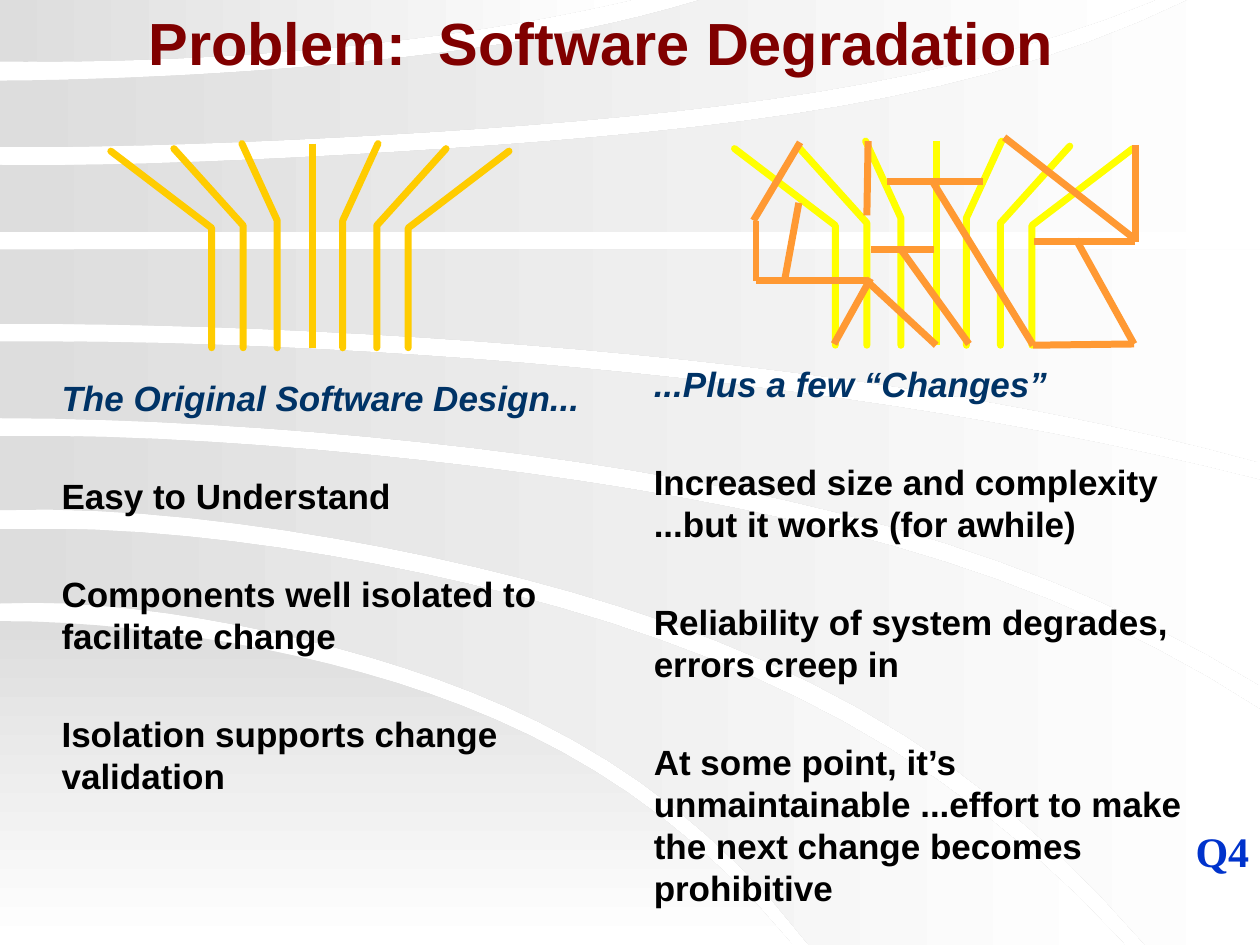
"""Build the slide on software degradation: clean design versus design after changes."""
from itertools import pairwise
from math import prod
from typing import NamedTuple

from lxml import etree
from pptx import Presentation
from pptx import util as u
from pptx.dml.color import RGBColor
from pptx.enum import shapes, text
from pptx.oxml import ns

Point = tuple[float, float]

WHITE = RGBColor.from_string("FFFFFF")
GREY = RGBColor.from_string("DDDDDD")
MAROON = RGBColor.from_string("800000")
NAVY = RGBColor.from_string("003366")
BLACK = RGBColor.from_string("000000")
BLUE = RGBColor.from_string("0033CC")
GOLD = RGBColor.from_string("FFCC00")
YELLOW = RGBColor.from_string("FFFF00")
ORANGE = RGBColor.from_string("FF9933")
STROKE = u.Pt(4)
CURVE_STEPS = 24


class Edge(NamedTuple):
    """A curve from the left side to an end, given by heights at equal steps."""
    end: float
    heights: tuple[float, ...]


class Band(NamedTuple):
    upper: Edge
    lower: Edge
    angle: int = 0


class Branch(NamedTuple):
    tip: float
    stem: float
    top: float


class Column(NamedTuple):
    left: float
    top: float
    width: float
    height: float
    heading: str
    remarks: list[str]


BANDS = [
    Band(Edge(6.29, (4.93, 5.06, 5.42, 6.12, 7.5)), Edge(6.29, (7.5, 7.5)), 270),
    Band(Edge(8.93, (4.2, 4.35, 4.83, 5.73, 7.5)), Edge(6.42, (4.79, 4.91, 5.3, 6.03, 7.5))),
    Band(Edge(10, (3.46, 3.57, 3.88, 4.46, 5.63)), Edge(9.09, (4.05, 4.21, 4.7, 5.62, 7.5))),
    Band(Edge(10, (2.71, 2.77, 2.96, 3.29, 3.81)), Edge(10, (3.32, 3.43, 3.73, 4.31, 5.44))),
    Band(Edge(10, (1.98, 1.98)), Edge(10, (2.57, 2.63, 2.81, 3.13, 3.67))),
    Band(Edge(9.43, (1.31, 1.25, 1.09, 0.77, 0)), Edge(10, (1.84, 1.84))),
    Band(Edge(5.56, (0.64, 0.6, 0.5, 0.32, 0)), Edge(9.17, (1.17, 1.11, 0.96, 0.66, 0))),
    Band(Edge(5.01, (0, 0)), Edge(5.01, (0.49, 0.47, 0.39, 0.24, 0))),
]

BRANCHES = [Branch(1.58, 0.78, 1.2), Branch(1.08, 0.53, 1.18), Branch(0.54, 0.26, 1.14)]
BEND_DEPTH = 0.61
TRUNK_TOP, TRUNK_FOOT = 1.14, 2.76

CHANGE_ROUTES: list[list[Point]] = [
    [(6.35, 1.13), (5.98, 1.75)],
    [(6, 1.75), (6, 2.23), (6.88, 2.23), (7.43, 2.74)],
    [(6.34, 1.61), (6.23, 2.21)],
    [(6.88, 1.71), (6.89, 1.12)],
    [(9.01, 1.15), (9.01, 1.92), (8.21, 1.92)],
    [(9.01, 1.9), (7.97, 1.09)],
    [(7.04, 1.44), (7.8, 1.44)],
    [(7.4, 1.44), (8.2, 2.74), (9, 2.73), (8.54, 1.9)],
    [(6.62, 2.73), (6.91, 2.21)],
    [(6.91, 1.98), (7.41, 1.98)],
    [(7.69, 2.73), (7.15, 1.98)],
]

COLUMNS = [
    Column(0.39, 2.94, 4.45, 3.77, "The Original Software Design...",
           ["Easy to Understand", "Components well isolated to facilitate change",
            "Isolation supports change validation"]),
    Column(5.09, 2.83, 4.85, 4.44, "...Plus a few “Changes”",
           ["Increased size and complexity\v...but it works (for awhile)",
            "Reliability of system degrades, errors creep in",
            "At some point, it’s unmaintainable ...effort to make the next change "
            "becomes prohibitive"]),
]


def trace(edge: Edge) -> list[Point]:
    """Return points on the polynomial through the heights of the edge."""
    knots = range(len(edge.heights))
    points = []
    for step in range(CURVE_STEPS + 1):
        share = step / CURVE_STEPS
        place = share * knots[-1]
        height = sum(edge.heights[i] * prod((place - j) / (i - j) for j in knots if j != i)
                     for i in knots)
        points.append((share * edge.end, height))
    return points


def add_outline(slide, points: list[Point], close: bool):
    start, *rest = [(u.Inches(x), u.Inches(y)) for x, y in points]
    builder = slide.shapes.build_freeform(*start)
    builder.add_line_segments(rest, close=close)
    outline = builder.convert_to_shape()
    outline.shadow.inherit = False
    return outline


def draw_band(slide, band: Band) -> None:
    shorter, longer = sorted((band.upper, band.lower), key=lambda edge: edge.end)
    corner = (longer.end, shorter.heights[-1])
    ribbon = add_outline(slide, [*trace(band.upper), corner, *reversed(trace(band.lower))], True)
    ribbon.fill.gradient()
    ribbon.fill.gradient_angle = band.angle
    for stop, color in zip(ribbon.fill.gradient_stops, (GREY, WHITE)):
        stop.color.rgb = color
    ribbon.line.fill.background()


def draw_line(slide, start: Point, end: Point, color: RGBColor) -> None:
    ends = [u.Inches(value) for value in (*start, *end)]
    line = slide.shapes.add_connector(shapes.MSO_CONNECTOR.STRAIGHT, *ends)
    line.line.color.rgb = color
    line.line.width = STROKE
    etree.SubElement(line._element.spPr, ns.qn("a:effectLst"))


def draw_design(slide, axis: float, drop: float, color: RGBColor) -> None:
    foot = TRUNK_FOOT + drop
    for branch in BRANCHES:
        top = branch.top + drop
        for side in (-1, 1):
            stem = axis + side * branch.stem
            limb = add_outline(slide, [(axis + side * branch.tip, top),
                                       (stem, top + BEND_DEPTH), (stem, foot)], False)
            limb.fill.background()
            limb.line.color.rgb = color
            limb.line.width = STROKE
            stroke = limb._element.spPr.find(ns.qn("a:ln"))
            stroke.set("cap", "rnd")
            etree.SubElement(stroke, ns.qn("a:round"))
    trunk = axis + 0.02
    draw_line(slide, (trunk, TRUNK_TOP + drop), (trunk, foot), color)


def add_frame(slide, left: float, top: float, width: float, height: float,
              wrap: bool = True, anchor=text.MSO_ANCHOR.TOP):
    box = slide.shapes.add_textbox(*(u.Inches(value) for value in (left, top, width, height)))
    box.text_frame.word_wrap = wrap
    box.text_frame.vertical_anchor = anchor
    return box.text_frame


def write(paragraph, words: str, *, size: float, color: RGBColor, font: str = "Arial",
          italic: bool = False, before: float = 0, pitch: float | None = None) -> None:
    paragraph.text = words
    if before:
        paragraph.space_before = u.Pt(before)
    if pitch:
        paragraph.line_spacing = u.Pt(pitch)
    for run in paragraph.runs:
        run.font.name = font
        run.font.size = u.Pt(size)
        run.font.bold = True
        run.font.italic = italic
        run.font.color.rgb = color


def draw_column(slide, column: Column) -> None:
    frame = add_frame(slide, column.left, column.top, column.width, column.height)
    write(frame.paragraphs[0], column.heading, size=20, color=NAVY, italic=True, pitch=24)
    for remark in column.remarks:
        write(frame.add_paragraph(), remark, size=20, color=BLACK, before=32, pitch=24)


def main() -> None:
    deck = Presentation()
    deck.slide_width, deck.slide_height = u.Inches(10), u.Inches(7.5)
    slide = deck.slides.add_slide(deck.slide_layouts[6])
    for band in BANDS:
        draw_band(slide, band)
    title = add_frame(slide, 1.08, 0.08, 8.5, 0.58, anchor=text.MSO_ANCHOR.BOTTOM)
    write(title.paragraphs[0], "Problem:  Software Degradation", size=34, color=MAROON)
    draw_design(slide, 2.46, 0, GOLD)
    draw_design(slide, 7.41, -0.02, YELLOW)
    for route in CHANGE_ROUTES:
        for start, end in pairwise(route):
            draw_line(slide, start, end, ORANGE)
    for column in COLUMNS:
        draw_column(slide, column)
    question = add_frame(slide, 9.39, 6.5, 0.63, 0.5, wrap=False)
    write(question.paragraphs[0], "Q4", size=24, color=BLUE, font="Times New Roman")
    deck.save("out.pptx")


if __name__ == "__main__":
    main()
